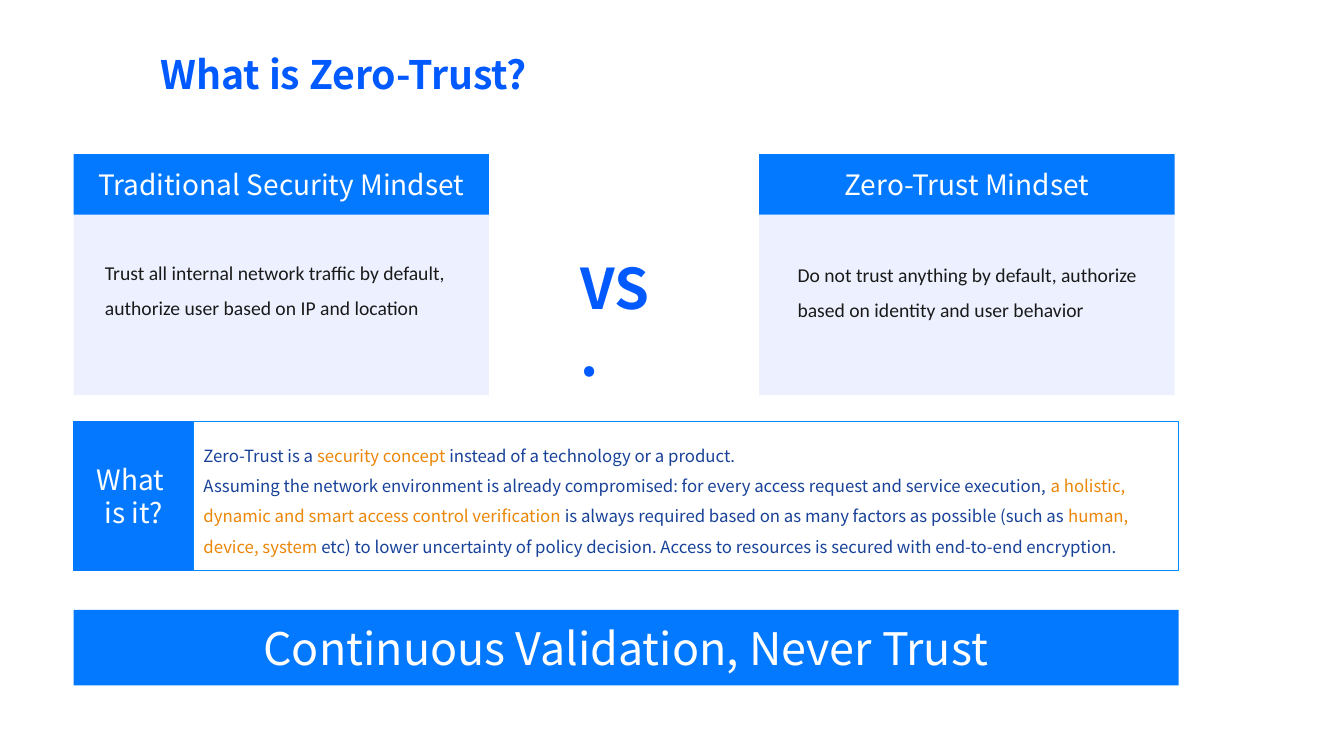
import pptx
import pptx.util
import pptx.dml.color
import pptx.enum.shapes
import pptx.enum.text

Inches = pptx.util.Inches
SHAPE = pptx.enum.shapes.MSO_SHAPE
ALIGN = pptx.enum.text.PP_ALIGN
ANCHOR = pptx.enum.text.MSO_ANCHOR
SC = "Noto Sans CJK SC"
WHITE, BLUE, TITLE_BLUE, NAVY, ORANGE = "FFFFFF", "0379FF", "005AFF", "184199", "EB8608"


def rgb(value):
    return pptx.dml.color.RGBColor.from_string(value)


def write(s, paragraphs, size, font=SC, align=ALIGN.LEFT, spacing=None,
          bold=False, anchor=ANCHOR.MIDDLE, inset=None):
    """Fill a shape with paragraphs, each a list of (text, colour) runs."""
    tf = s.text_frame
    tf.word_wrap = True
    tf.vertical_anchor = anchor
    if inset is not None:
        for side in ("left", "top", "right", "bottom"):
            setattr(tf, "margin_" + side, Inches(inset))
    for i, runs in enumerate(paragraphs):
        p = tf.add_paragraph() if i else tf.paragraphs[0]
        p.alignment = align
        if spacing:
            p.line_spacing = spacing
        for text, color in runs:
            r = p.add_run()
            r.text = text
            for name, value in {"size": pptx.util.Pt(size), "name": font, "bold": bold}.items():
                setattr(r.font, name, value)
            r.font.color.rgb = rgb(color)


prs = pptx.Presentation()
prs.slide_width, prs.slide_height = Inches(13.33), Inches(7.5)
s = prs.slides.add_slide(prs.slide_layouts[5])

# Title
title = s.shapes.title
title.left, title.top, title.width, title.height = map(Inches, (1.49, 0.43, 11.32, 0.66))
write(title, [[("What is Zero-Trust?", TITLE_BLUE)]], 28, "Noto Sans CJK JP", spacing=0.9, bold=True)

# Blocks: position, fill, line colour, line width
blocks = {}
for name, at, fill, line, width in [
    ("question", (0.73, 4.18, 1.19, 1.48), "0479FF", "0479FF", 1),
    ("definition", (1.92, 4.18, 9.77, 1.48), None, "0588FF", 0.75),
    ("traditional body", (0.73, 2.11, 4.12, 1.81), "EDF1FF", None, 0),
    ("traditional head", (0.73, 1.53, 4.12, 0.6), BLUE, None, 0),
    ("zero-trust body", (7.53, 2.13, 4.12, 1.79), "EDF1FF", None, 0),
    ("zero-trust head", (7.53, 1.53, 4.12, 0.6), BLUE, None, 0),
    ("motto", (0.73, 6.05, 10.96, 0.75), BLUE, None, 0),
]:
    sp = s.shapes.add_shape(SHAPE.RECTANGLE, *map(Inches, at))
    sp.shadow.inherit = False
    if fill:
        sp.fill.solid()
        sp.fill.fore_color.rgb = rgb(fill)
    else:
        sp.fill.background()
    if line:
        sp.line.color.rgb = rgb(line)
        sp.line.width = pptx.util.Pt(width)
    else:
        sp.line.fill.background()
    blocks[name] = sp

# Headings and motto
for name, lines, size, inset in [
    ("question", ["What ", "is it?"], 20, None),
    ("traditional head", ["Traditional Security Mindset"], 20, 0),
    ("zero-trust head", ["Zero-Trust Mindset"], 20, 0),
    ("motto", ["Continuous Validation, Never Trust"], 32, 0.04),
]:
    write(blocks[name], [[(text, WHITE)] for text in lines], size, align=ALIGN.CENTER, inset=inset)

# Definition
write(blocks["definition"], [
    [("Zero-Trust is a ", NAVY), ("security concept", ORANGE),
     (" instead of a technology or a product.", NAVY)],
    [("Assuming the network environment is already compromised: for every access request "
      "and service execution, ", NAVY),
     ("a holistic, dynamic and smart access control verification", ORANGE),
     (" is always required based on as many factors as possible (such as ", NAVY),
     ("human, device, system ", ORANGE),
     ("etc) to lower uncertainty of policy decision. Access to resources is secured with "
      "end-to-end encryption.", NAVY)],
], 12, spacing=1.5)

# Mindset descriptions and the versus mark
description = {"size": 14, "font": "Calibri", "spacing": 1.5, "inset": 0}
for at, text, color, style in [
    ((1.04, 2.47, 3.49, 0.99),
     "Trust all internal network traffic by default, authorize user based on IP and location",
     "1A1A1A", description),
    ((7.91, 2.49, 3.62, 1.13),
     "Do not trust anything by default, authorize based on identity and user behavior",
     "1A1A1A", description),
    ((5.72, 2.47, 0.82, 0.75), "VS.", TITLE_BLUE, {"size": 40, "bold": True, "inset": 0.04}),
]:
    box = s.shapes.add_textbox(*map(Inches, at))
    write(box, [[(text, color)]], anchor=ANCHOR.TOP, **style)

prs.save("out.pptx")
